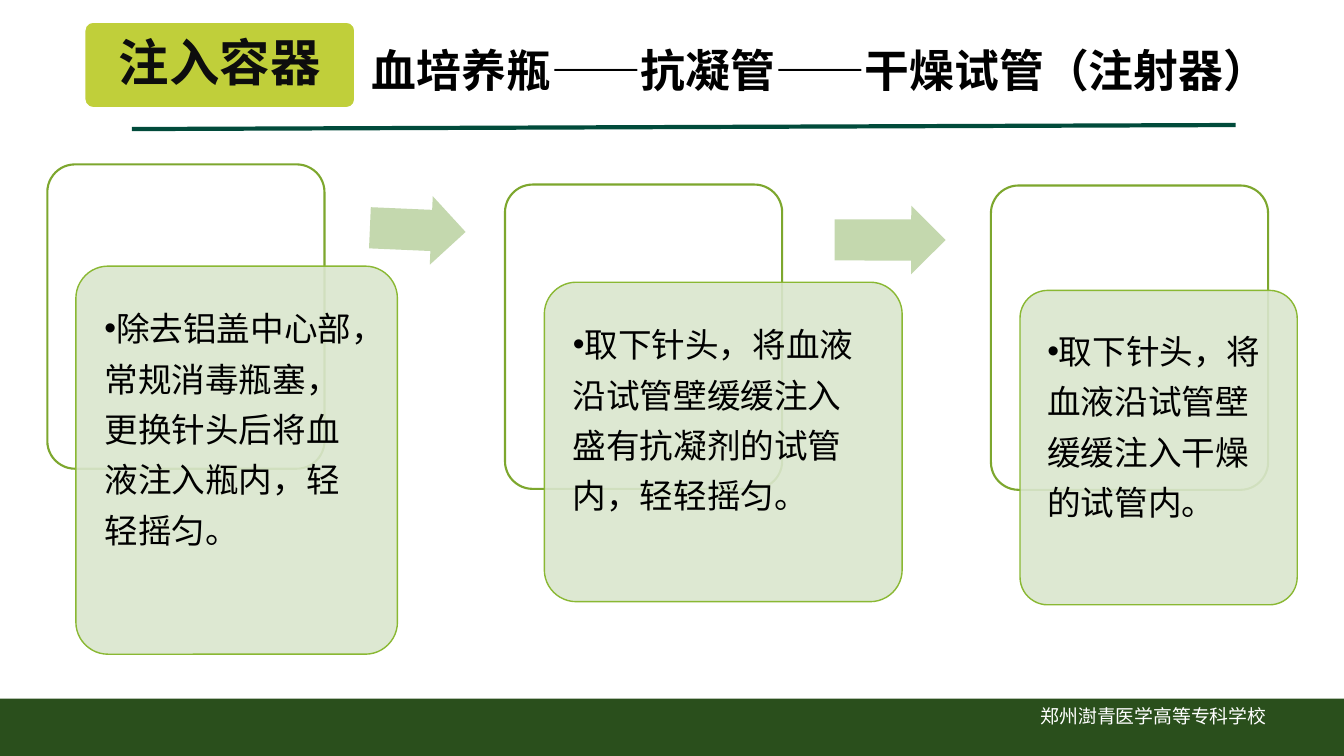
"""Build the slide on injecting blood into three kinds of container."""
from dataclasses import dataclass
from pptx import Presentation
from pptx.dml.color import RGBColor as RGB
from pptx.enum.shapes import MSO_CONNECTOR as LINK, MSO_SHAPE as KIND
from pptx.enum.text import MSO_ANCHOR as ANCHOR, PP_ALIGN as ALIGN
from pptx.oxml.ns import qn
from pptx.util import Pt
from lxml.etree import SubElement as Sub


@dataclass(frozen=True)
class Theme:
    """Hold the colours, fonts and type sizes."""
    white: str = "FFFFFF"
    black: str = "000000"
    ink: str = "0D0D0D"
    band: str = "2A4F1C"
    lime: str = "C0CF3A"
    frame: str = "7DA72E"
    card: str = "DAE6CE"
    edge: str = "8AB833"
    arrow: str = "C4D8AE"
    rule: str = "014B3B"
    latin: str = "Arial"
    han: str = "Noto Sans CJK SC"
    title: float = 36
    head: float = 32
    body: float = 24
    foot: float = 13.5


T = Theme()
TITLE = "注入容器"
HEAD = "血培养瓶——抗凝管——干燥试管（注射器）"
FOOT = "郑州澍青医学高等专科学校"
FRAME = (198, 217.4)
STEPS = [
    {"frame": (33.8, 117.4), "card": (54.2, 190.1, 229.7, 277.2),
     "text": "除去铝盖中心部，常规消毒瓶塞，更换针头后将血液注入瓶内，轻轻摇匀。"},
    {"frame": (360.7, 131.8), "card": (388.8, 201.6, 255.6, 228.2),
     "text": "取下针头，将血液沿试管壁缓缓注入盛有抗凝剂的试管内，轻轻摇匀。"},
    {"frame": (707.8, 132.5), "card": (728.6, 207.4, 198, 224.6),
     "text": "取下针头，将血液沿试管壁缓缓注入干燥的试管内。"},
]
ARROWS = [((264.2, 139.7, 68.4, 49), 2.5), ((596.2, 146.9, 79.2, 49), 0.1)]

deck = Presentation()
deck.slide_width, deck.slide_height = Pt(960), Pt(540)
slide = deck.slides.add_slide(deck.slide_layouts[6])


def shape(kind, box, fill, line=None, width=1, adj=()):
    """Draw a flat preset shape."""
    item = slide.shapes.add_shape(kind, *map(Pt, box))
    item.shadow.inherit = False
    item.fill.solid()
    item.fill.fore_color.rgb = RGB.from_string(fill)
    if line:
        item.line.color.rgb = RGB.from_string(line)
        item.line.width = Pt(width)
    else:
        item.line.fill.background()
    for i, size in enumerate(adj):
        item.adjustments[i] = size
    return item


def write(item, text, size, color, face=T.han, bold=False,
          align=ALIGN.LEFT, anchor=ANCHOR.TOP, pad=(7.2, 3.6, 7.2, 3.6)):
    """Put one paragraph in a shape and return it."""
    frame = item.text_frame
    frame.word_wrap = True
    frame.vertical_anchor = anchor
    (frame.margin_left, frame.margin_top,
     frame.margin_right, frame.margin_bottom) = map(Pt, pad)
    para = frame.paragraphs[0]
    para.alignment = align
    run = para.add_run()
    run.text = text
    font = run.font
    font.size, font.bold, font.name = Pt(size), bold, face
    font.color.rgb = RGB.from_string(color)
    Sub(font._element, qn("a:ea")).set("typeface", T.han)
    return para


def label(box, *args, **opts):
    """Add a text box with one paragraph."""
    return write(slide.shapes.add_textbox(*map(Pt, box)), *args, **opts)


def bullet(para):
    """Start the paragraph with a dot."""
    props = para._p.get_or_add_pPr()
    props.set("marL", "0")
    props.set("indent", str(-Pt(18)))
    Sub(props, qn("a:buFont")).set("typeface", T.latin)
    Sub(props, qn("a:buChar")).set("char", "•")


def step(frame, card, text):
    """Draw an outline with a text card over its corner."""
    shape(KIND.ROUNDED_RECTANGLE, frame + FRAME, T.white, T.frame, 1.5, [0.1])
    item = shape(KIND.ROUNDED_RECTANGLE, card, T.card, T.edge, 1, [0.1])
    tint = item.fill._xPr.find(qn("a:solidFill"))[0]
    Sub(tint, qn("a:alpha")).set("val", "90000")
    para = write(item, text, T.body, T.black, pad=(13.7, 16, 13.7, 13.7))
    para.line_spacing = Pt(36)
    bullet(para)


def main():
    """Draw every part and save the deck."""
    shape(KIND.RECTANGLE, (0, 499, 960, 42), T.band)
    label((687.6, 500, 272.9, 33), FOOT, T.foot, T.white, align=ALIGN.CENTER)
    badge = shape(KIND.ROUNDED_RECTANGLE, (60.5, 15.8, 193, 61.2),
                  T.lime, T.white, 1, [0.1])
    para = write(badge, TITLE, T.title, T.ink, T.latin, True,
                 ALIGN.CENTER, ANCHOR.MIDDLE, (7.2,) * 4)
    para.line_spacing = 0.9
    for item in STEPS:
        step(**item)
    for box, turn in ARROWS:
        shape(KIND.RIGHT_ARROW, box, T.arrow, adj=(0.6, 0.5)).rotation = turn
    label((258.5, 27, 659.5, 46), HEAD, T.head, T.black, T.latin, True)
    rule = slide.shapes.add_connector(
        LINK.STRAIGHT, *map(Pt, (94.3, 92.2, 882.7, 89.3)))
    rule.line.color.rgb = RGB.from_string(T.rule)
    rule.line.width = Pt(3)
    Sub(rule._element.spPr, qn("a:effectLst"))
    deck.save("out.pptx")


if __name__ == "__main__":
    main()
